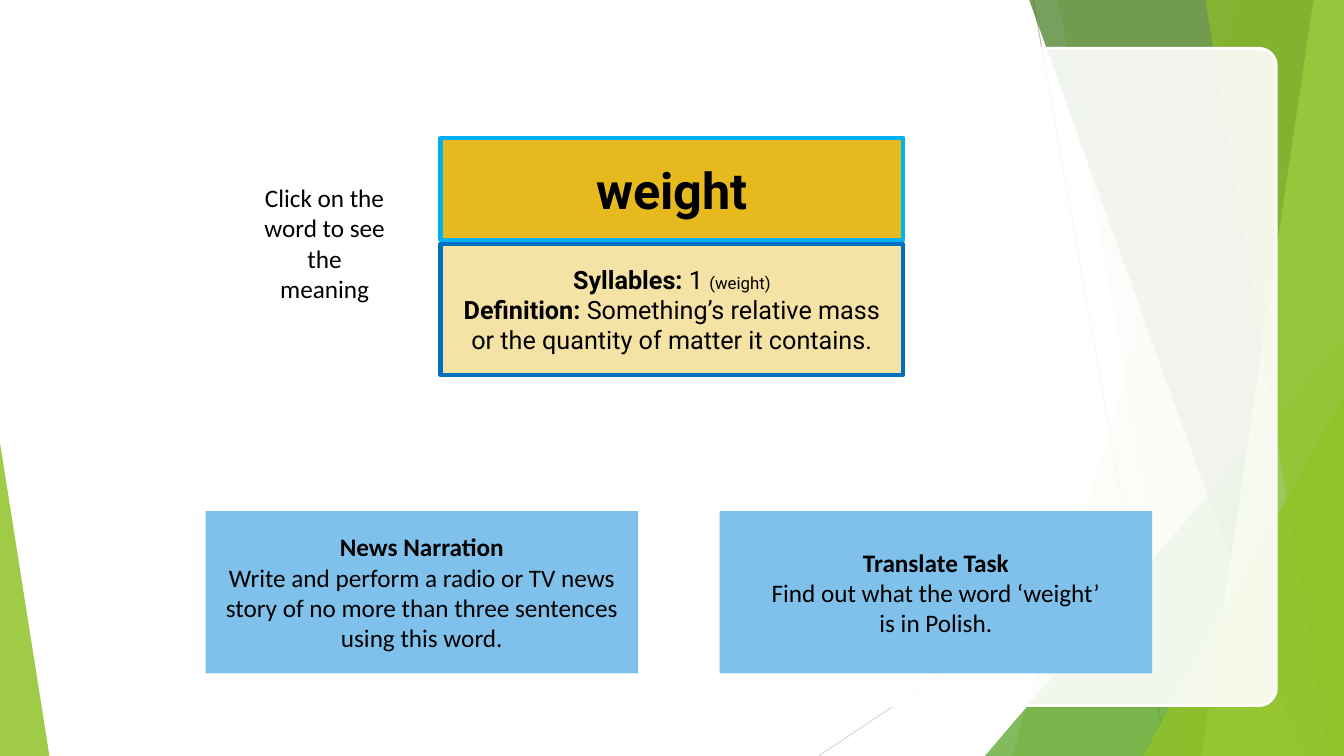
"""Build the vocabulary slide for the word weight."""
import itertools
import lxml.etree
import pptx
import pptx.dml.color
import pptx.enum.shapes
import pptx.enum.text
import pptx.oxml.ns
import pptx.util

THEME = {
    "lime": "90C226", "leaf": "54A021", "moss": "3F7819", "pale": "C0E474",
    "white": "FFFFFF", "ink": "000000", "gold": "E6B91E", "cream": "F5E3A5",
    "sky": "80C1EB", "cyan": "00B0F0", "blue": "0070C0",
    "gray": "BFBFBF", "mist": "D9D9D9",
    "title": 36, "body": 18, "small": 12,
    "plain": "Calibri", "word": "Roboto",
}
KIND = pptx.enum.shapes.MSO_SHAPE
TEXT = pptx.enum.text
tint = pptx.dml.color.RGBColor.from_string
qname = pptx.oxml.ns.qn

deck = pptx.Presentation()
deck.slide_width = pptx.util.Inches(13.333)
deck.slide_height = pptx.util.Inches(7.5)
slide = deck.slides.add_slide(deck.slide_layouts[6])
shapes = slide.shapes


def place(*shares):
    """Turn percent shares of width and height, in turn, into lengths."""
    sides = itertools.cycle((deck.slide_width, deck.slide_height))
    return [round(side * share / 100) for side, share in zip(sides, shares)]


def paint(shape, fill, solid=100, edge=None, width=0):
    """Give a shape its fill, opacity and outline."""
    shape.shadow.inherit = False
    shape.fill.solid()
    shape.fill.fore_color.rgb = tint(THEME[fill])
    if solid < 100:
        color = shape.element.spPr.find(qname("a:solidFill"))[0]
        lxml.etree.SubElement(color, qname("a:alpha"), val=str(solid * 1000))
    if edge:
        shape.line.color.rgb = tint(THEME[edge])
        shape.line.width = pptx.util.Pt(width)
    else:
        shape.line.fill.background()


for ends, color in (((76.88, 0, 86.85, 100), "gray"),
                    ((100, 53.73, 60.9, 100), "mist")):
    line = shapes.add_connector(pptx.enum.shapes.MSO_CONNECTOR.STRAIGHT, *place(*ends))
    line.line.color.rgb = tint(THEME[color])
    line.line.width = pptx.util.Pt(0.75)
    lxml.etree.SubElement(line.element.spPr, qname("a:effectLst"))

facets = [
    ("band", (92.1, 75.3), "lime", 30),
    ("band", (78.75, 88.73), "lime", 20),
    ("peak", (73.28, 44.4, 26.72, 55.6, 1), "leaf", 72),
    ("band", (76.58, 96.83), "moss", 70),
    ("band", (97.73, 89.4), "pale", 70),
    ("band", (89.7, 98.85), "lime", 65),
    ("peak", (85.05, 52.4, 14.95, 47.6, 1), "lime", 80),
    ("peak", (0, 58.53, 3.68, 41.47, 0), "lime", 85),
]
for form, spots, color, solid in facets:
    if form == "band":
        top, foot = spots
        path = shapes.build_freeform(*place(top, 0))
        path.add_line_segments([place(100, 0), place(100, 100), place(foot, 100)])
        facet = path.convert_to_shape()
    else:
        facet = shapes.add_shape(KIND.ISOSCELES_TRIANGLE, *place(*spots[:4]))
        facet.adjustments[0] = spots[4]
    paint(facet, color, solid)

panel = shapes.add_shape(KIND.ROUNDED_RECTANGLE, *place(5.03, 6.4, 89.93, 86.93))
panel.adjustments[0] = 0.026
paint(panel, "white", 90, "white", 2)

cards = [
    ((18.75, 23.47, 10.8, 17.47), None, "plain",
     [[("Click on the word to see the meaning", "body", False)]]),
    ((32.78, 18.27, 34.43, 13.47), ("gold", 100, "cyan", 3), "word",
     [[("weight", "title", True)]]),
    ((32.78, 32.27, 34.43, 17.33), ("cream", 100, "blue", 3), "word",
     [[("Syllables: ", "body", True), ("1 ", "body", False),
       ("(weight)", "small", False)],
      [("Definition: ", "body", True),
       ("Something’s relative mass or the quantity of matter it contains.",
        "body", False)]]),
    ((15.3, 67.6, 32.18, 21.47), ("sky",), "plain",
     [[("News Narration", "body", True)],
      [("Write and perform a radio or TV news story of no more than three "
        "sentences using this word.", "body", False)]]),
    ((53.55, 67.6, 32.18, 21.47), ("sky",), "plain",
     [[("Translate Task", "body", True)],
      [("Find out what the word ‘weight’\nis in Polish.", "body", False)]]),
]
for spot, style, face, paras in cards:
    if style:
        card = shapes.add_shape(KIND.RECTANGLE, *place(*spot))
        paint(card, *style)
        form = {"word_wrap": True, "vertical_anchor": TEXT.MSO_ANCHOR.MIDDLE}
    else:
        card = shapes.add_textbox(*place(*spot))
        form = {"word_wrap": True, "auto_size": TEXT.MSO_AUTO_SIZE.SHAPE_TO_FIT_TEXT}
    frame = card.text_frame
    for key, value in form.items():
        setattr(frame, key, value)
    for rank, parts in enumerate(paras):
        para = frame.add_paragraph() if rank else frame.paragraphs[0]
        para.alignment = TEXT.PP_ALIGN.CENTER
        for words, size, bold in parts:
            for row, piece in enumerate(words.split("\n")):
                if row:
                    para.add_line_break()
                run = para.add_run()
                run.text = piece
                looks = {"name": THEME[face], "bold": bold,
                         "size": pptx.util.Pt(THEME[size])}
                for key, value in looks.items():
                    setattr(run.font, key, value)
                run.font.color.rgb = tint(THEME["ink"])

deck.save("out.pptx")
